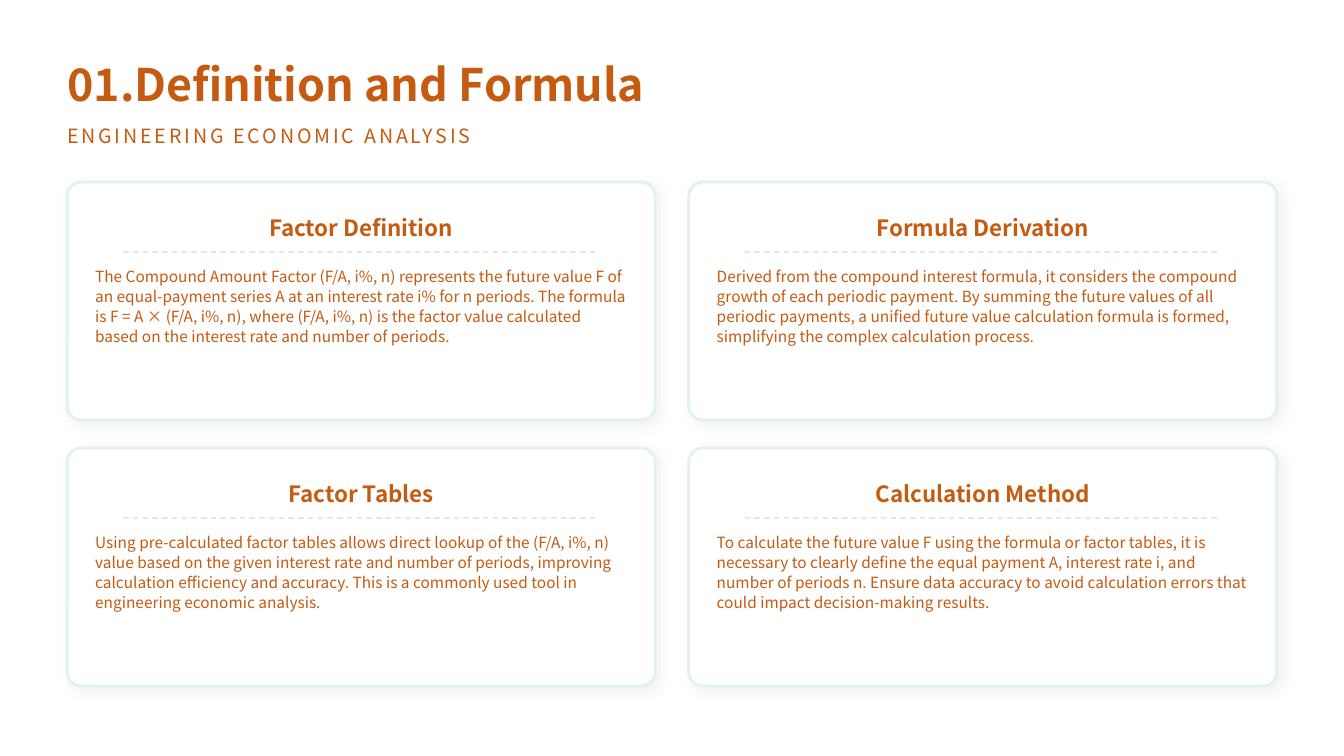
from lxml.etree import SubElement
from pptx import Presentation
from pptx.dml.color import RGBColor
from pptx.enum.dml import MSO_LINE_DASH_STYLE as Dash
from pptx.enum.shapes import MSO_CONNECTOR as Connector, MSO_SHAPE as Shape
from pptx.enum.text import MSO_ANCHOR as Anchor, PP_ALIGN as Align
from pptx.oxml.ns import qn
from pptx.util import Pt

COLUMNS, ROWS = 96, 54
CARD_WIDTH, CARD_HEIGHT = 42, 17
CARD_LEFT, CARD_TOP = 4.8, 13
COLUMN_PITCH, ROW_PITCH = 44.4, 19

CARDS = [
    ("Factor Definition",
     "The Compound Amount Factor (F/A, i%, n) represents the future value F of "
     "an equal-payment series A at an interest rate i% for n periods. The formula "
     "is F = A × (F/A, i%, n), where (F/A, i%, n) is the factor value calculated "
     "based on the interest rate and number of periods."),
    ("Formula Derivation",
     "Derived from the compound interest formula, it considers the compound "
     "growth of each periodic payment. By summing the future values of all "
     "periodic payments, a unified future value calculation formula is formed, "
     "simplifying the complex calculation process."),
    ("Factor Tables",
     "Using pre-calculated factor tables allows direct lookup of the (F/A, i%, n) "
     "value based on the given interest rate and number of periods, improving "
     "calculation efficiency and accuracy. This is a commonly used tool in "
     "engineering economic analysis."),
    ("Calculation Method",
     "To calculate the future value F using the formula or factor tables, it is "
     "necessary to clearly define the equal payment A, interest rate i, and "
     "number of periods n. Ensure data accuracy to avoid calculation errors that "
     "could impact decision-making results."),
]


def color(hex_string):
    return RGBColor.from_string(hex_string)


class SlideBuilder:
    font_name = "Noto Sans CJK SC"
    text_color = "C55A11"
    card_fill, card_border = "FFFFFF", "E0F2F1"
    divider_color = "E6E6E6"

    def __init__(self, presentation):
        self.slide = presentation.slides.add_slide(presentation.slide_layouts[6])
        self.column = presentation.slide_width / COLUMNS
        self.row = presentation.slide_height / ROWS

    def place(self, left, top, width, height):
        """Turn grid columns and rows into slide lengths."""
        return (round(left * self.column), round(top * self.row),
                round(width * self.column), round(height * self.row))

    def text(self, box, words, size, bold=False, align=Align.LEFT,
             anchor=Anchor.MIDDLE, line_spacing=1.25, tracking=0):
        frame = self.slide.shapes.add_textbox(*self.place(*box)).text_frame
        frame.word_wrap = True
        frame.vertical_anchor = anchor
        frame.margin_left = frame.margin_right = 0
        frame.margin_top = frame.margin_bottom = 0
        paragraph = frame.paragraphs[0]
        paragraph.alignment = align
        paragraph.line_spacing = line_spacing
        run = paragraph.add_run()
        run.text = words
        font = paragraph.font
        font.name, font.size, font.bold = self.font_name, Pt(size), bold
        font.color.rgb = color(self.text_color)
        if tracking:
            run.font._element.set("spc", str(tracking * 100))

    def panel(self, box):
        shape = self.slide.shapes.add_shape(Shape.ROUNDED_RECTANGLE, *self.place(*box))
        shape.adjustments[0] = 1 / CARD_HEIGHT
        shape.fill.solid()
        shape.fill.fore_color.rgb = color(self.card_fill)
        shape.line.color.rgb = color(self.card_border)
        shape.line.width = Pt(2)
        self.soft_shadow(shape)

    def soft_shadow(self, shape):
        shape.shadow.inherit = False
        effects = shape._element.spPr.find(qn("a:effectLst"))
        shadow = SubElement(effects, qn("a:outerShdw"), blurRad=str(Pt(10)),
                            dist=str(Pt(4)), dir=str(45 * 60000),
                            algn="tl", rotWithShape="0")
        tint = SubElement(shadow, qn("a:srgbClr"), val="000000")
        SubElement(tint, qn("a:alpha"), val="5000")

    def divider(self, left, top, width):
        x, y, length, _ = self.place(left, top, width, 0)
        line = self.slide.shapes.add_connector(Connector.STRAIGHT, x, y, x + length, y)
        line.line.color.rgb = color(self.divider_color)
        line.line.width = Pt(1)
        line.line.dash_style = Dash.DASH
        SubElement(line._element.spPr, qn("a:effectLst"))

    def card(self, left, top, heading, body):
        self.panel((left, top, CARD_WIDTH, CARD_HEIGHT))
        self.text((left + 2, top + 1.5, CARD_WIDTH - 4, 3), heading, 16,
                  bold=True, align=Align.CENTER)
        self.divider(left + 4, top + 5, CARD_WIDTH - 8)
        self.text((left + 2, top + 6, CARD_WIDTH - 4, 9), body, 11,
                  anchor=Anchor.TOP, line_spacing=1.08)


def main():
    presentation = Presentation()
    presentation.slide_width, presentation.slide_height = Pt(960), Pt(540)
    builder = SlideBuilder(presentation)

    # Title and subtitle
    builder.text((CARD_LEFT, 3.5, 86.4, 4), "01.Definition and Formula", 32, bold=True)
    builder.text((CARD_LEFT, 8.5, 86.4, 2), "ENGINEERING ECONOMIC ANALYSIS", 14, tracking=2)

    # Two by two cards
    for index, (heading, body) in enumerate(CARDS):
        row, column = divmod(index, 2)
        builder.card(CARD_LEFT + column * COLUMN_PITCH,
                     CARD_TOP + row * ROW_PITCH, heading, body)

    presentation.save("out.pptx")


if __name__ == "__main__":
    main()
